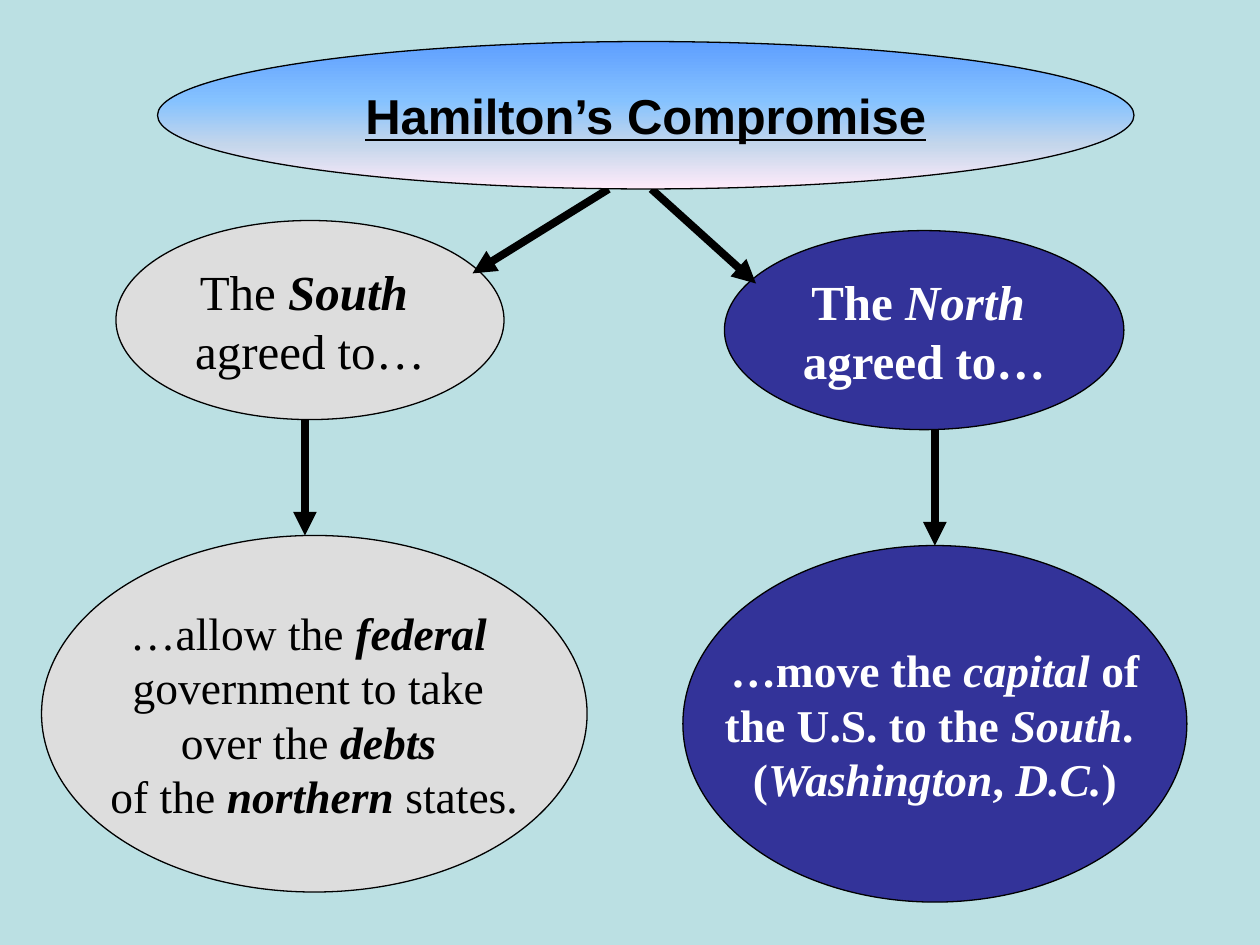
from lxml import etree
from pptx import Presentation
from pptx.dml.color import RGBColor
from pptx.enum import shapes, text
from pptx.oxml import ns
from pptx.util import Inches, Pt

BLACK, WHITE, GREY, NAVY = "000000", "FFFFFF", "DDDDDD", "333399"
SKY_STOPS = [(0, "5E9EFF"), (40, "85C2FF"), (70, "C4D6EB"), (100, "FFEBFA")]
SIDE_SIZE, DEAL_SIZE = 28, 26  # the longer deal lines must stay inside their ellipses


def rgb(value):
    return RGBColor.from_string(value)


def add_ellipse(s, box):
    sp = s.shapes.add_shape(shapes.MSO_SHAPE.OVAL, *map(Inches, box))
    sp.shadow.inherit = False
    sp.line.color.rgb = rgb(BLACK)
    sp.line.width = Pt(0.75)
    return sp


def set_gradient(sp, stops):
    """Fill from top to bottom with (percent, colour) stops."""
    sp.fill.gradient()
    sp.fill.gradient_angle = 270
    stop_list = sp._element.spPr.find(".//" + ns.qn("a:gsLst"))
    for old in list(stop_list):
        stop_list.remove(old)
    for percent, color in stops:
        stop = etree.SubElement(stop_list, ns.qn("a:gs"), pos=str(percent * 1000))
        etree.SubElement(stop, ns.qn("a:srgbClr"), val=color)


def add_title(s, box):
    set_gradient(add_ellipse(s, box), SKY_STOPS)
    title = s.shapes.title
    title.left, title.top, title.width, title.height = map(Inches, box)
    s.shapes._spTree.append(title._element)  # bring in front of its ellipse
    tf = title.text_frame
    tf.text = "Hamilton’s Compromise"
    tf.vertical_anchor = text.MSO_ANCHOR.MIDDLE
    p = tf.paragraphs[0]
    p.alignment = text.PP_ALIGN.CENTER
    font = p.font
    font.name, font.size = "Arial", Pt(28)
    font.bold = font.underline = True
    font.color.rgb = rgb(BLACK)


def add_bubble(s, box, fill, color, bold, size, lines):
    """Ellipse with centred lines; words between asterisks are emphasised."""
    sp = add_ellipse(s, box)
    sp.fill.solid()
    sp.fill.fore_color.rgb = rgb(fill)
    tf = sp.text_frame
    tf.word_wrap = False
    tf.vertical_anchor = text.MSO_ANCHOR.MIDDLE
    for i, line in enumerate(lines):
        p = tf.add_paragraph() if i else tf.paragraphs[0]
        p.alignment = text.PP_ALIGN.CENTER
        p.font.name, p.font.size, p.font.bold = "Times New Roman", Pt(size), bold
        p.font.color.rgb = rgb(color)
        for n, part in enumerate(line.split("*")):
            if part:
                r = p.add_run()
                r.text = part
                if n % 2:
                    r.font.bold = r.font.italic = True


def add_arrow(s, start, end):
    line = s.shapes.add_connector(
        shapes.MSO_CONNECTOR.STRAIGHT, *map(Inches, start + end))
    line.line.color.rgb = rgb(BLACK)
    line.line.width = Pt(4.5)
    etree.SubElement(line.line._get_or_add_ln(), ns.qn("a:tailEnd"), type="triangle")
    etree.SubElement(line._element.spPr, ns.qn("a:effectLst"))


def add_side(s, side_box, deal_box, arrow_x, style, side, deal):
    """One region: who agreed, an arrow down, and what they agreed to."""
    add_bubble(s, side_box, *style, SIDE_SIZE, [f"The *{side} *", "agreed to…"])
    add_bubble(s, deal_box, *style, DEAL_SIZE, deal)
    add_arrow(s, (arrow_x, side_box[1] + side_box[3]), (arrow_x, deal_box[1]))


def main():
    prs = Presentation()
    prs.slide_width, prs.slide_height = Inches(10), Inches(7.5)
    s = prs.slides.add_slide(prs.slide_layouts[5])
    s.background.fill.solid()
    s.background.fill.fore_color.rgb = rgb("BBE0E3")

    add_side(s, (0.92, 1.75, 3.08, 1.58), (0.33, 4.25, 4.33, 2.83), 2.42,
             (GREY, BLACK, False), "South",
             ["…allow the *federal *", "government to take ",
              "over the *debts *", "of the *northern* states."])
    add_side(s, (5.75, 1.83, 3.17, 1.58), (5.42, 4.33, 4, 2.83), 7.42,
             (NAVY, WHITE, True), "North",
             ["…move the *capital* of", "the U.S. to the *South*. ",
              "(*Washington*, *D.C.*)"])
    add_arrow(s, (4.83, 1.5), (3.75, 2.17))
    add_arrow(s, (5.17, 1.5), (6, 2.25))
    add_title(s, (1.25, 0.33, 7.75, 1.17))
    prs.save("out.pptx")


if __name__ == "__main__":
    main()
